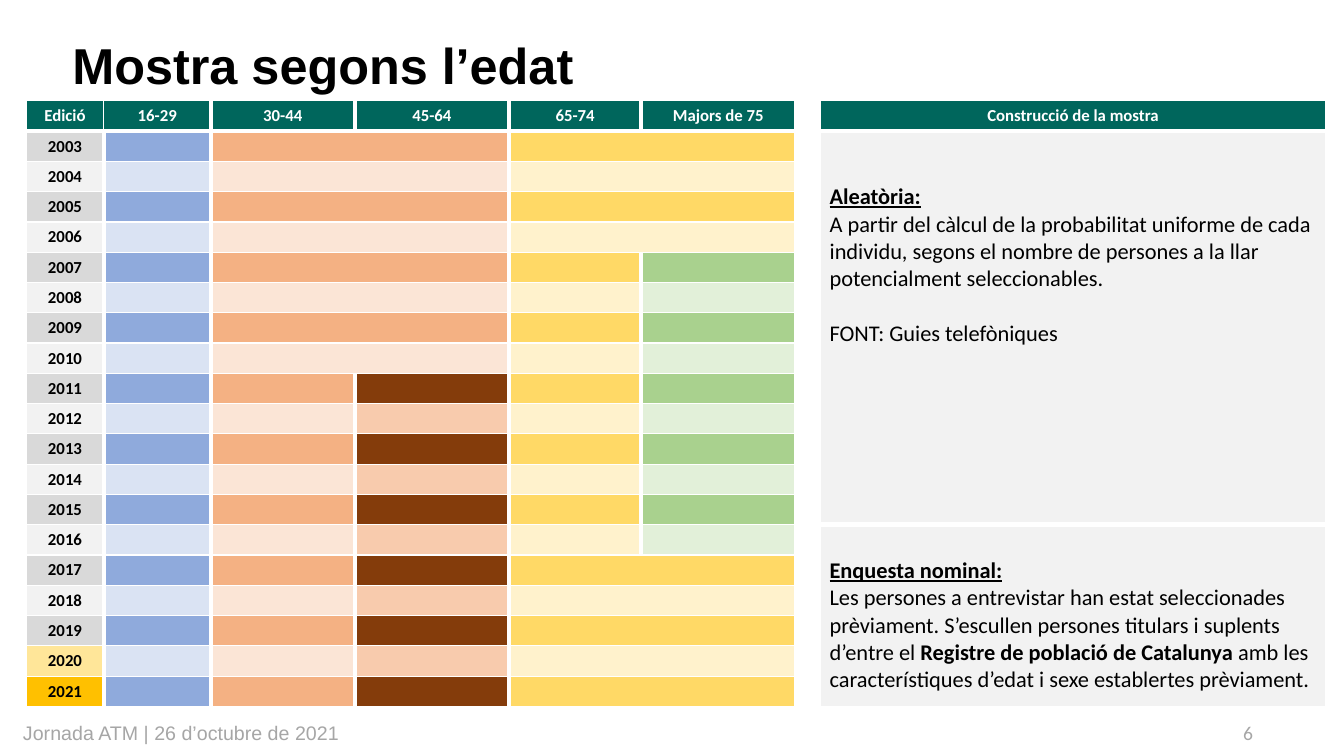
import pptx
import pptx.util
import pptx.dml.color
import pptx.enum.text
from lxml import etree
from pptx.oxml.ns import qn

Inches = pptx.util.Inches
Pt = pptx.util.Pt
ALIGN = pptx.enum.text.PP_ALIGN
ANCHOR = pptx.enum.text.MSO_ANCHOR

COLORS = {
    "white": "FFFFFF", "black": "000000", "footer": "A6A6A6",
    "header": "00665C", "panel": "F2F2F2",
    "previous": "FFE699", "current": "FFC000",
}
HEADERS = ["Edició", "16-29", "30-44", "45-64", "65-74", "Majors de 75", "",
           "Construcció de la mostra"]
WIDTHS = [0.77, 1.06, 1.43, 1.53, 1.31, 1.53, 0.23, 5.03]
ODD_YEAR = ["D9D9D9", "8FAADC", "F4B183", "843C0B", "FFD966", "A9D18E", "FFFFFF", "F2F2F2"]
EVEN_YEAR = ["F2F2F2", "DAE3F3", "FBE5D6", "F8CBAD", "FFF2CC", "E2F0D9", "FFFFFF", "F2F2F2"]
YEARS = range(2003, 2022)
REGISTER_YEAR = 2016
GAP, METHOD = 6, 7

RANDOM_TEXT = [
    [("Aleatòria:", True)],
    [("A partir del càlcul de la probabilitat uniforme de cada individu, segons el "
      "nombre de persones a la llar potencialment seleccionables.", False)],
    [("FONT: Guies telefòniques", False)],
]
NOMINAL_TEXT = [
    [("Enquesta nominal:", True)],
    [("Les persones a entrevistar han estat seleccionades prèviament. S’escullen "
      "persones titulars i suplents d’entre el ", False),
     ("Registre de població de Catalunya", True),
     (" amb les característiques d’edat i sexe establertes prèviament.", False)],
]


def rgb(value):
    """Turn a hex string into a colour."""
    return pptx.dml.color.RGBColor.from_string(value)


def style_font(font, size, color, name="Calibri", bold=None):
    """Set the look of a font."""
    font.name = name
    font.size = Pt(size)
    font.bold = bold
    font.color.rgb = rgb(color)


def add_label(page, text, left, top, width, height, size, color, name, bold=False, wrap=False):
    """Add a one-line text box and return its paragraph."""
    box = page.shapes.add_textbox(Inches(left), Inches(top), Inches(width), Inches(height))
    box.text_frame.word_wrap = wrap
    box.text_frame.vertical_anchor = ANCHOR.MIDDLE
    para = box.text_frame.paragraphs[0]
    para.text = text
    style_font(para.font, size, color, name, bold)
    return para


def set_borders(cell, left=3, right=3, top=1, bottom=1):
    """Draw white borders of the given widths in points."""
    properties = cell._tc.get_or_add_tcPr()
    for tag, width in (("a:lnL", left), ("a:lnR", right), ("a:lnT", top), ("a:lnB", bottom)):
        line = etree.SubElement(properties, qn(tag), w=str(Pt(width)))
        fill = etree.SubElement(line, qn("a:solidFill"))
        etree.SubElement(fill, qn("a:srgbClr"), val=COLORS["white"])


def paint_cell(cell, color, **borders):
    """Set the borders and fill of a cell, with a small empty line height."""
    set_borders(cell, **borders)
    cell.fill.solid()
    cell.fill.fore_color.rgb = rgb(color)
    cell.vertical_anchor = ANCHOR.MIDDLE
    para = cell.text_frame.paragraphs[0]
    etree.SubElement(para._p, qn("a:endParaRPr"), sz="1200")


def write_label(cell, text, color):
    """Write a centred bold label in a cell."""
    para = cell.text_frame.paragraphs[0]
    para.text = text
    para.alignment = ALIGN.CENTER
    style_font(para.font, 12, color, bold=True)


def write_method(cell, paragraphs, top):
    """Write a sampling method under its underlined heading."""
    cell.vertical_anchor = ANCHOR.TOP
    cell.margin_top = Inches(top)
    frame = cell.text_frame
    for index, spans in enumerate(paragraphs):
        para = frame.add_paragraph() if index else frame.paragraphs[0]
        style_font(para.font, 16, COLORS["black"])
        para.font.underline = index == 0
        if index == 2:
            para.space_before = Pt(19.5)
        for text, bold in spans:
            span = para.add_run()
            span.text = text
            span.font.bold = bold


def add_sample_table(page):
    """Add the table of age groups by survey edition."""
    count = len(YEARS) + 1
    table = page.shapes.add_table(count, len(WIDTHS), Inches(0.26), Inches(1),
                                  Inches(sum(WIDTHS)), Inches(0.3 * count)).table
    table.first_row = False
    table.horz_banding = False
    for column, width in zip(table.columns, WIDTHS):
        column.width = Inches(width)
    for row in table.rows:
        row.height = Inches(0.3)

    for column, text in enumerate(HEADERS):
        cell = table.cell(0, column)
        paint_cell(cell, COLORS["white" if column == GAP else "header"],
                   left=1 if column < 2 else 3, right=3 if column else 1, bottom=3)
        if text:
            write_label(cell, text, COLORS["white"])

    year_fills = {2020: COLORS["previous"], 2021: COLORS["current"]}
    for row, year in enumerate(YEARS, start=1):
        fills = ODD_YEAR if year % 2 else EVEN_YEAR
        for column, fill in enumerate(fills):
            borders = {"left": 3 if column else 1}
            if column == METHOD:
                borders["top"] = 4.5 if year == REGISTER_YEAR else 1
                borders["bottom"] = 4.5 if year < REGISTER_YEAR else 1
            elif row == 1:
                borders["top"] = 3
            paint_cell(table.cell(row, column),
                       fill if column else year_fills.get(year, fill), **borders)
        write_label(table.cell(row, 0), str(year), COLORS["black"])
        if year < 2011:
            table.cell(row, 2).merge(table.cell(row, 3))
        if year < 2007 or year > 2016:
            table.cell(row, 4).merge(table.cell(row, 5))

    register_row = YEARS.index(REGISTER_YEAR) + 1
    for first, last, text, top in ((1, register_row - 1, RANDOM_TEXT, 0.52),
                                   (register_row, count - 1, NOMINAL_TEXT, 0.32)):
        cell = table.cell(first, METHOD)
        cell.merge(table.cell(last, METHOD))
        write_method(cell, text, top)


def main():
    """Build the slide and save it."""
    deck = pptx.Presentation()
    deck.slide_width = Inches(13.33)
    deck.slide_height = Inches(7.5)
    page = deck.slides.add_slide(deck.slide_layouts[6])
    add_label(page, "Jornada ATM | 26 d’octubre de 2021", 0.13, 7.1, 3.46, 0.34,
              14, COLORS["footer"], "Arial")
    add_label(page, "6", 12.23, 7.1, 0.55, 0.34, 14, COLORS["footer"], "Calibri", wrap=True)
    title = add_label(page, "Mostra segons l’edat", 0.62, 0.35, 12.64, 0.65,
                      36, COLORS["black"], "Arial", bold=True, wrap=True)
    title.line_spacing = 0.9
    add_sample_table(page)
    deck.save("out.pptx")


if __name__ == "__main__":
    main()
